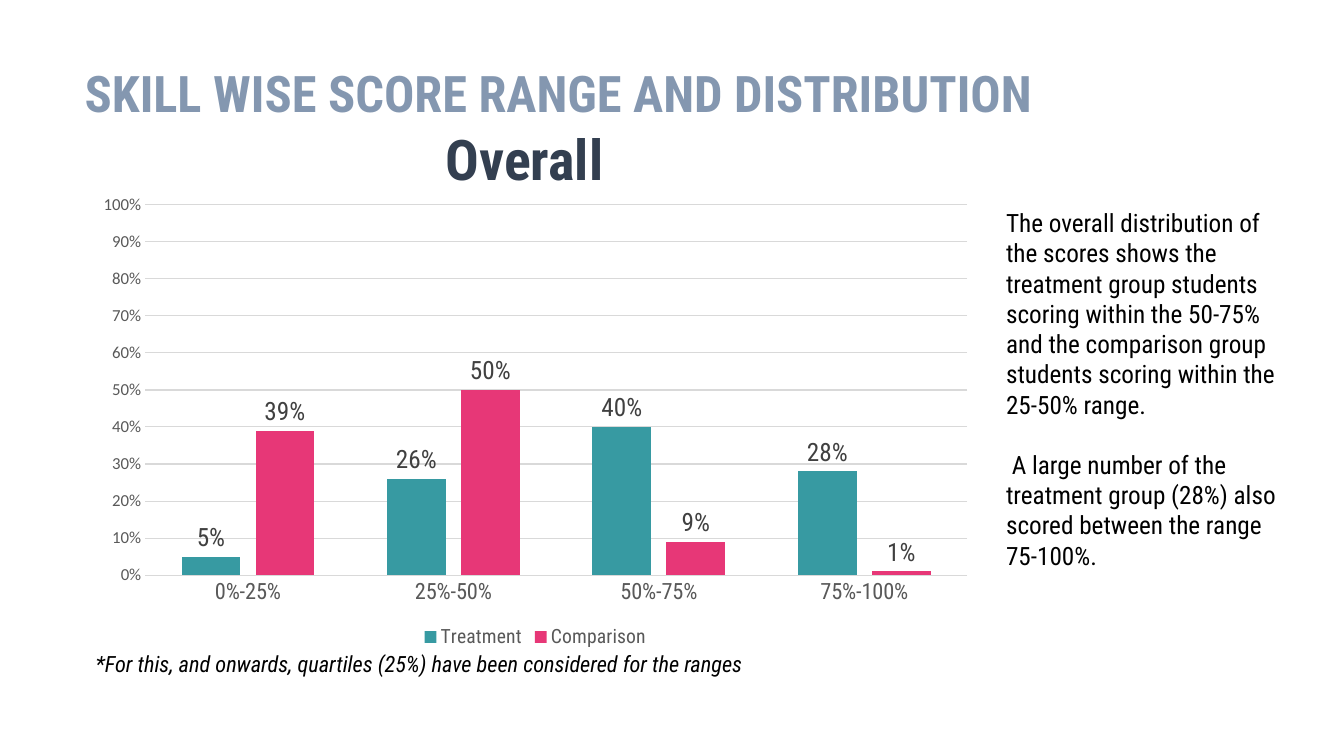
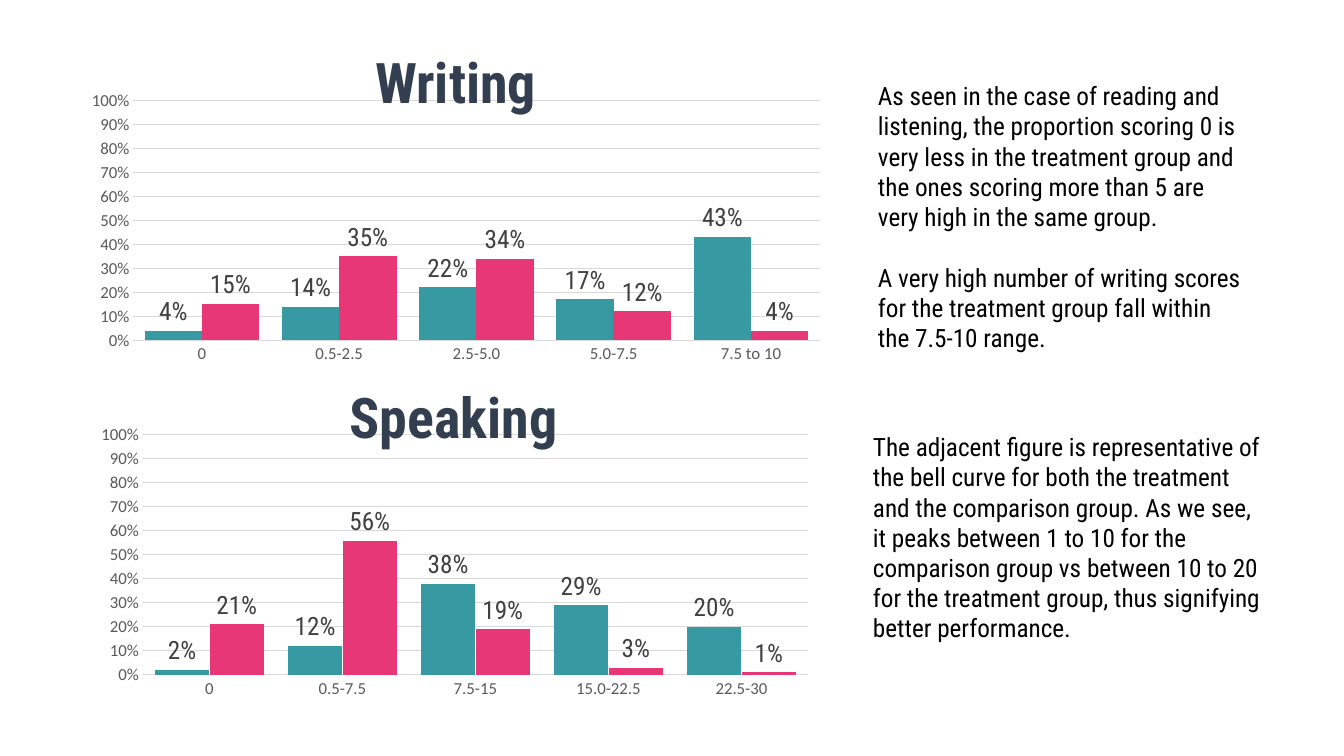
import pptx
import pptx.chart.data
import pptx.dml.color
import pptx.enum.chart
import pptx.enum.text
import pptx.util

Inches = pptx.util.Inches
Pt = pptx.util.Pt


def color(value):
    return pptx.dml.color.RGBColor.from_string(value)


class Deck:
    """Holds the shared style and the slide being built."""

    HEADING_FONT = "Roboto Condensed"
    AXIS_FONT = "Calibri"
    BLACK = "000000"
    TITLE = "8497B0"
    HEADING = "333F50"
    AXIS_TEXT = "595959"
    LABEL_TEXT = "404040"
    GRID = "D9D9D9"
    SERIES = ("379AA2", "E73777")
    HEADING_SIZE = (2.58, 1.22)

    def __init__(self):
        self.presentation = pptx.Presentation()
        self.presentation.slide_width = Inches(13.33)
        self.presentation.slide_height = Inches(7.5)
        self.slide = None

    def new_slide(self):
        layout = self.presentation.slide_layouts.get_by_name("Title Only")
        self.slide = self.presentation.slides.add_slide(layout)

    def style_font(self, font, size, hex_color, name=HEADING_FONT):
        font.size = Pt(size)
        font.name = name
        font.color.rgb = color(hex_color)

    def fill_heading(self, shape, text, size, hex_color):
        frame = shape.text_frame
        frame.text = text
        frame.word_wrap = True
        frame.auto_size = pptx.enum.text.MSO_AUTO_SIZE.NONE
        frame.vertical_anchor = pptx.enum.text.MSO_ANCHOR.MIDDLE
        paragraph = frame.paragraphs[0]
        paragraph.alignment = pptx.enum.text.PP_ALIGN.LEFT
        paragraph.line_spacing = 0.9
        self.style_font(paragraph.font, size, hex_color)
        paragraph.font.bold = True

    def title(self, text, left, top, width, height, size=40, hex_color=HEADING):
        shape = self.slide.shapes.title
        shape.left, shape.top = Inches(left), Inches(top)
        shape.width, shape.height = Inches(width), Inches(height)
        self.fill_heading(shape, text, size, hex_color)
        # Bring the title in front of everything added so far
        shape.element.getparent().append(shape.element)

    def text_box(self, left, top, width, height):
        return self.slide.shapes.add_textbox(
            Inches(left), Inches(top), Inches(width), Inches(height))

    def chart_heading(self, text, left, top):
        shape = self.text_box(left, top, *self.HEADING_SIZE)
        self.fill_heading(shape, text, 40, self.HEADING)

    def body(self, paragraphs, left, top, width, height, size=18, italic=False):
        frame = self.text_box(left, top, width, height).text_frame
        frame.word_wrap = True
        frame.auto_size = pptx.enum.text.MSO_AUTO_SIZE.SHAPE_TO_FIT_TEXT
        for index, text in enumerate(paragraphs):
            paragraph = frame.add_paragraph() if index else frame.paragraphs[0]
            paragraph.text = text
            paragraph.space_before = Pt(21.5 if index else 0)
            self.style_font(paragraph.font, size, self.BLACK)
            paragraph.font.italic = italic

    def column_chart(self, box, categories, series, gap, overlap,
                     category_font=(12, AXIS_TEXT, AXIS_FONT), legend=False):
        data = pptx.chart.data.CategoryChartData(number_format="0%")
        data.categories = categories
        for name, values in series.items():
            data.add_series(name, values)
        chart = self.slide.shapes.add_chart(
            pptx.enum.chart.XL_CHART_TYPE.COLUMN_CLUSTERED,
            *map(Inches, box), data).chart
        chart.has_title = False
        self.style_font(chart.font, 10, self.BLACK, self.AXIS_FONT)

        # Legend
        chart.has_legend = legend
        if legend:
            chart.legend.position = pptx.enum.chart.XL_LEGEND_POSITION.BOTTOM
            chart.legend.include_in_layout = False
            self.style_font(chart.legend.font, 14, self.AXIS_TEXT)

        # Axes
        category_axis, value_axis = chart.category_axis, chart.value_axis
        for axis in (category_axis, value_axis):
            axis.major_tick_mark = pptx.enum.chart.XL_TICK_MARK.NONE
            axis.minor_tick_mark = pptx.enum.chart.XL_TICK_MARK.NONE
        self.style_font(category_axis.tick_labels.font, *category_font)
        self.style_font(value_axis.tick_labels.font, 12, self.AXIS_TEXT,
                        self.AXIS_FONT)
        value_axis.minimum_scale, value_axis.maximum_scale = 0, 1
        value_axis.major_unit = 0.1
        value_axis.tick_labels.number_format = "0%"
        value_axis.tick_labels.number_format_is_linked = False
        value_axis.format.line.fill.background()
        for line in (category_axis.format.line,
                     value_axis.major_gridlines.format.line):
            line.color.rgb = color(self.GRID)
            line.width = Pt(0.75)

        # Columns and their labels
        plot = chart.plots[0]
        plot.vary_by_categories = False
        plot.gap_width, plot.overlap = gap, overlap
        for column, hex_color in zip(plot.series, self.SERIES):
            column.format.fill.solid()
            column.format.fill.fore_color.rgb = color(hex_color)
            labels = column.data_labels
            labels.show_value = True
            labels.position = pptx.enum.chart.XL_LABEL_POSITION.OUTSIDE_END
            labels.number_format = "0%"
            labels.number_format_is_linked = False
            self.style_font(labels.font, 18, self.LABEL_TEXT)


def overall_slide(deck):
    deck.new_slide()
    deck.title("SKILL WISE SCORE RANGE AND DISTRIBUTION",
               0.74, 0.34, 10.36, 1.22, size=36, hex_color=deck.TITLE)
    deck.body(
        ["The overall distribution of the scores shows the treatment group "
         "students scoring within the 50-75% and the comparison group "
         "students scoring within the 25-50% range.",
         " A large number of the treatment group (28%) also scored between "
         "the range 75-100%."],
        9.88, 2.01, 2.97, 3.74)
    deck.chart_heading("Overall", 4.32, 1)
    deck.column_chart(
        (0.85, 1.84, 8.92, 4.64),
        ["0%-25%", "25%-50%", "50%-75%", "75%-100%"],
        {"Treatment": (0.05, 0.26, 0.4, 0.28),
         "Comparison": (0.39, 0.5, 0.09, 0.01)},
        gap=124, overlap=-26,
        category_font=(16, deck.AXIS_TEXT, deck.HEADING_FONT), legend=True)
    deck.body(["*For this, and onwards, quartiles (25%) have been considered "
               "for the ranges"],
              0.85, 6.4, 10.72, 0.37, size=16, italic=True)


def writing_and_speaking_slide(deck):
    deck.new_slide()

    # Writing
    deck.body(
        ["As seen in the case of reading and listening, the proportion "
         "scoring 0 is very less in the treatment group and the ones scoring "
         "more than 5 are very high in the same group.",
         "A very high number of writing scores for the treatment group fall "
         "within the 7.5-10 range."],
        8.61, 0.75, 3.83, 2.83)
    deck.column_chart(
        (0.76, 0.84, 7.52, 2.83),
        ["0", "0.5-2.5", "2.5-5.0", "5.0-7.5", "7.5 to 10"],
        {"Series 1": (0.04, 0.14, 0.22, 0.17, 0.43),
         "Series 2": (0.15, 0.35, 0.34, 0.12, 0.04)},
        gap=39, overlap=1)
    deck.title("Writing", 3.62, 0.24, *deck.HEADING_SIZE)

    # Speaking
    deck.column_chart(
        (0.86, 4.16, 7.3, 2.83),
        ["0", "0.5-7.5", "7.5-15", "15.0-22.5", "22.5-30"],
        {"Series 1": (0.02, 0.12, 0.38, 0.29, 0.2),
         "Series 2": (0.21, 0.56, 0.19, 0.03, 0.01)},
        gap=46, overlap=-2)
    deck.chart_heading("Speaking", 3.37, 3.56)
    deck.body(
        ["The adjacent figure is representative of the bell curve for both "
         "the treatment and the comparison group. As we see, it peaks between "
         "1 to 10 for the comparison group vs between 10 to 20 for the "
         "treatment group, thus signifying better performance."],
        8.56, 4.23, 4.04, 2.52)


def main():
    deck = Deck()
    overall_slide(deck)
    writing_and_speaking_slide(deck)
    deck.presentation.save("out.pptx")


if __name__ == "__main__":
    main()
